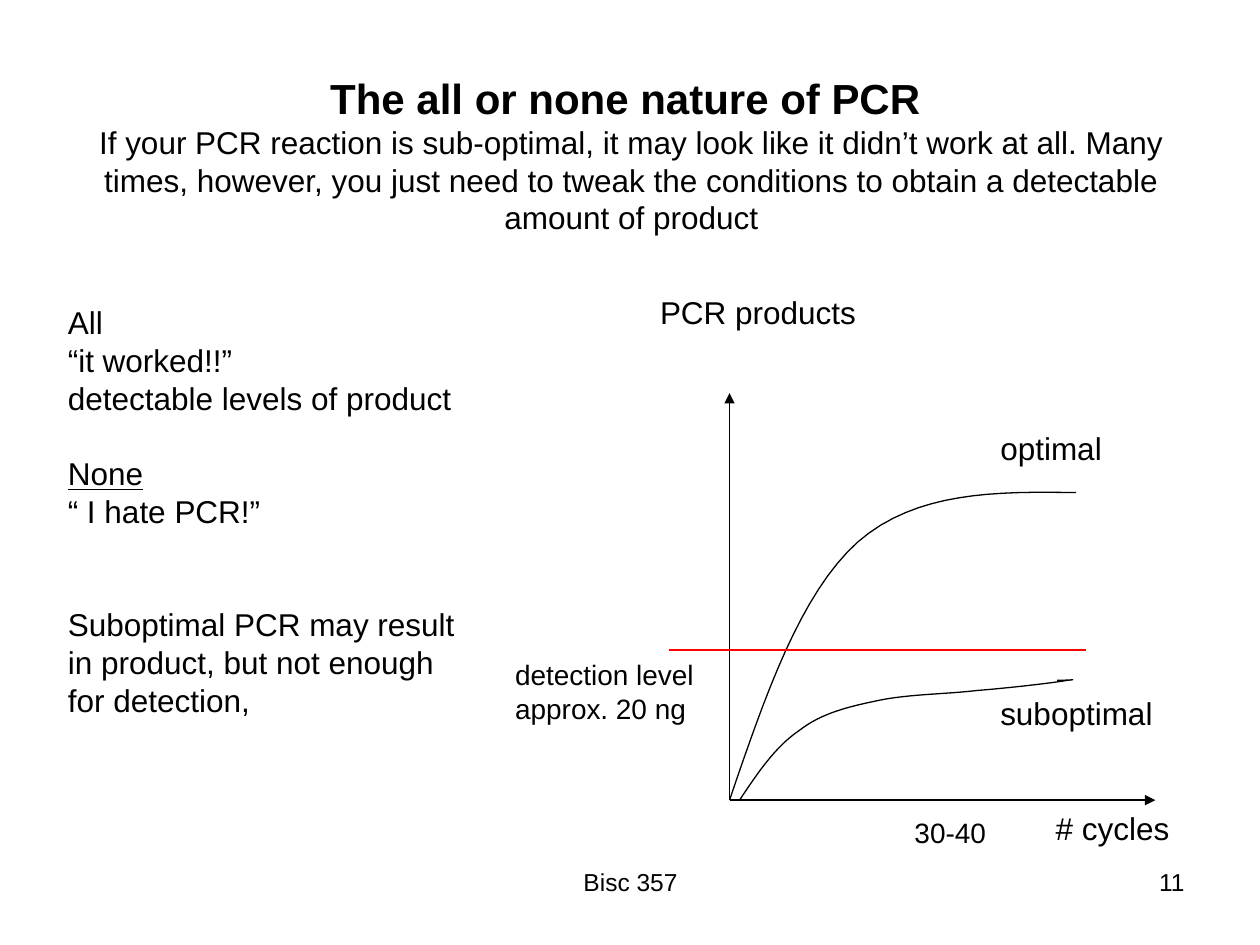
from lxml.etree import SubElement
from pptx import Presentation
from pptx.dml.color import RGBColor
from pptx.enum.shapes import MSO_CONNECTOR as Conn
from pptx.enum.text import MSO_ANCHOR as Anchor, MSO_AUTO_SIZE as Fit, PP_ALIGN as Align
from pptx.oxml.ns import qn
from pptx.util import Inches, Pt

FONT, BLACK, RED = "Arial", "000000", "FF0000"
ROW = 21.5  # height of one 18 pt line, in points

TITLE = [
    ("The all or none nature of PCR ", 24, True),
    ("If your PCR reaction is sub-optimal, it may look like it didn’t work at all. "
     "Many times, however, you just need to tweak the conditions to obtain a "
     "detectable amount of product", 18, False),
]
# text, rows of space before, underlined
NOTES = [
    ("All", 0, False),
    ("“it worked!!”", 0, False),
    ("detectable levels of product", 0, False),
    ("None", 1, True),
    ("“ I hate PCR!”", 0, False),
    ("Suboptimal PCR may result", 2, False),
    ("in product, but not enough", 0, False),
    ("for detection,", 0, False),
]
# text, box, size, alignment, wrap
LABELS = [
    ("PCR products", (5.14, 2.28, 1.76, 0.4), 18, Align.LEFT, False),
    ("# cycles", (8.28, 6.37, 1.1, 0.4), 18, Align.LEFT, False),
    ("30-40", (7.16, 6.42, 0.77, 0.37), 16, Align.LEFT, False),
    ("detection level\napprox. 20 ng", (3.99, 5.17, 1.62, 0.64), 16, Align.LEFT, False),
    ("optimal", (7.84, 3.36, 1.42, 0.4), 18, Align.LEFT, False),
    ("suboptimal", (7.84, 5.46, 1.42, 0.4), 18, Align.LEFT, False),
    ("11", (7.17, 6.83, 2.33, 0.52), 14, Align.RIGHT, True),
    ("Bisc 357", (3.42, 6.83, 3.17, 0.52), 14, Align.CENTER, True),
]
ORIGIN = (5.79, 6.35)
# from, to, colour, arrow
LINES = [
    (ORIGIN, (5.79, 3.12), BLACK, True),
    (ORIGIN, (9.17, 6.35), BLACK, True),
    ((8.62, 5.16), (5.31, 5.16), RED, False),
]
# Bezier chains: a start, then two controls and an end per segment
OPTIMAL = [ORIGIN, (6.07, 5.53), (6.35, 4.71), (6.81, 4.3),
           (7.27, 3.9), (7.91, 3.9), (8.54, 3.91)]
SUBOPTIMAL = [(5.87, 6.35), (6.01, 6.14), (6.15, 5.93), (6.34, 5.8),
              (6.52, 5.66), (6.73, 5.61), (6.97, 5.56),
              (7.2, 5.51), (7.51, 5.51), (7.76, 5.48),
              (8.01, 5.46), (8.36, 5.42), (8.47, 5.4),
              (8.57, 5.39), (8.48, 5.4), (8.39, 5.4)]
STEPS = 16


def paint(target, color):
    target.rgb = RGBColor.from_string(color)


def style(run, size, bold=False, under=False):
    font = run.font
    font.name, font.size = FONT, Pt(size)
    font.bold, font.underline = bold, under
    paint(font.color, BLACK)


def add_text(slide, text, box, wrap):
    frame = slide.shapes.add_textbox(*map(Inches, box)).text_frame
    frame.word_wrap = wrap
    frame.text = text
    return frame.paragraphs


def add_title(slide):
    title = slide.shapes.title
    title.left, title.top, title.width, title.height = map(Inches, (0.51, 0.6, 9, 1.25))
    frame = title.text_frame
    frame.auto_size, frame.vertical_anchor = Fit.NONE, Anchor.MIDDLE
    frame.text = "\v".join(text for text, _, _ in TITLE)
    par = frame.paragraphs[0]
    par.alignment = Align.CENTER
    for run, (_, size, bold) in zip(par.runs, TITLE):
        style(run, size, bold)
    gap = par._p.find(qn("a:br"))
    SubElement(gap, qn("a:rPr"), sz=str(TITLE[0][1] * 100))


def trace(chain):
    """Return points along a chain of cubic Bezier segments."""
    points = [chain[0]]
    for i in range(0, len(chain) - 1, 3):
        for step in range(1, STEPS + 1):
            t = step / STEPS
            u = 1 - t
            mix = (u ** 3, 3 * u * u * t, 3 * u * t * t, t ** 3)
            points.append(tuple(sum(m * p[axis] for m, p in zip(mix, chain[i:i + 4]))
                                for axis in (0, 1)))
    return points


def add_curve(slide, chain):
    first, *rest = [(Inches(x), Inches(y)) for x, y in trace(chain)]
    pen = slide.shapes.build_freeform(*first)
    pen.add_line_segments(rest, close=False)
    curve = pen.convert_to_shape()
    curve.shadow.inherit = False
    curve.fill.background()
    curve.line.width = Pt(0.75)
    paint(curve.line.color, BLACK)


def add_line(slide, start, end, color, arrow):
    link = slide.shapes.add_connector(Conn.STRAIGHT, *map(Inches, start + end))
    link.line.width = Pt(0.75)
    paint(link.line.color, color)
    if arrow:
        SubElement(link.line._get_or_add_ln(), qn("a:tailEnd"), type="triangle")
    SubElement(link._element.spPr, qn("a:effectLst"))


def main():
    deck = Presentation()
    deck.slide_width, deck.slide_height = Inches(10), Inches(7.5)
    slide = deck.slides.add_slide(deck.slide_layouts[5])
    add_title(slide)
    for chain in (OPTIMAL, SUBOPTIMAL):
        add_curve(slide, chain)
    for line in LINES:
        add_line(slide, *line)
    for text, box, size, align, wrap in LABELS:
        for par in add_text(slide, text, box, wrap):
            par.alignment = align
            style(par.runs[0], size)
    notes = "\n".join(text for text, _, _ in NOTES)
    pars = add_text(slide, notes, (0.44, 2.36, 3.3, 4.04), False)
    for par, (_, rows, under) in zip(pars, NOTES):
        style(par.runs[0], 18, under=under)
        par.space_before = Pt(rows * ROW)
    deck.save("out.pptx")


if __name__ == "__main__":
    main()
